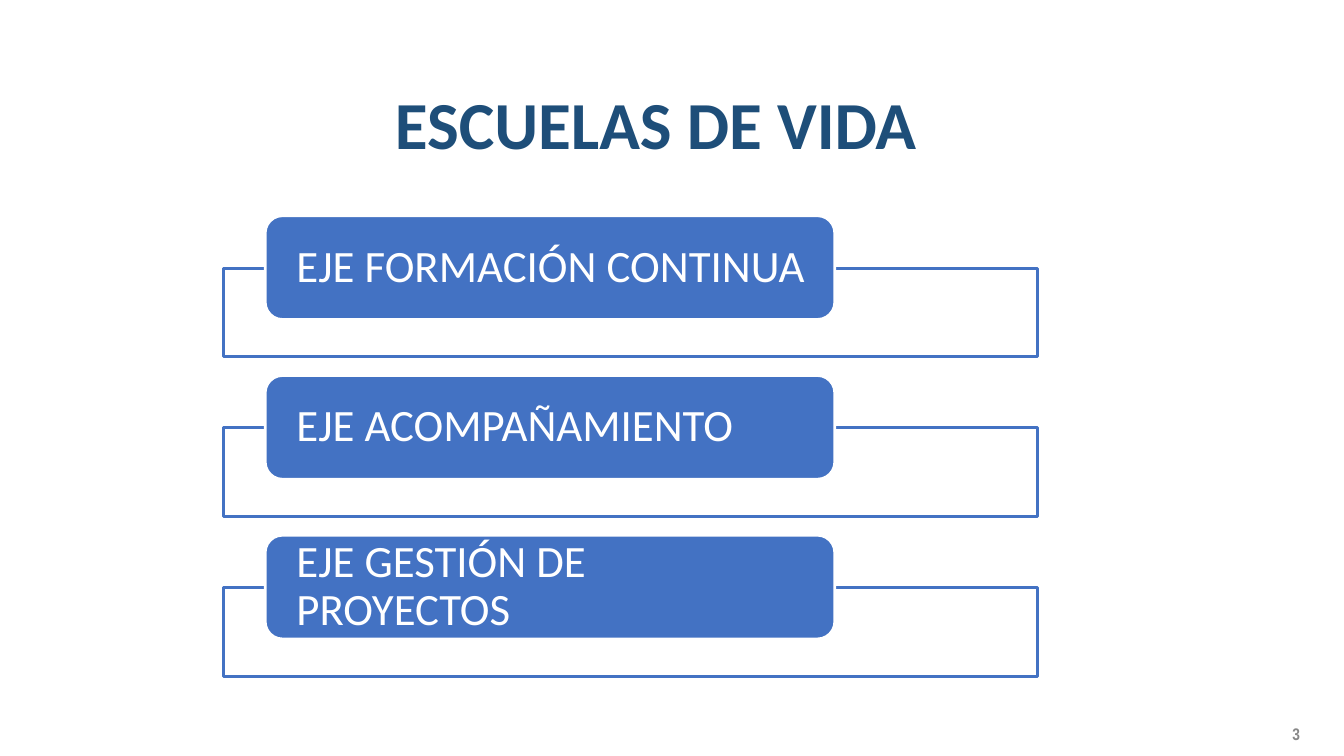
from lxml import etree
from pptx import Presentation
from pptx.dml.color import RGBColor
from pptx.enum.shapes import MSO_SHAPE as Shape
from pptx.enum.text import MSO_ANCHOR as Anchor, PP_ALIGN as Align
from pptx.oxml.ns import qn
from pptx.util import Pt

EMU_PER_PX = 9144  # 100 px to the inch
BLUE, NAVY, GRAY, WHITE = "4372C3", "1E4E79", "888888", "FFFFFF"
AXES = ["EJE FORMACIÓN CONTINUA", "EJE ACOMPAÑAMIENTO", "EJE GESTIÓN DE PROYECTOS"]


def px(*lengths):
    return [round(length * EMU_PER_PX) for length in lengths]


def color(hex_code):
    return RGBColor.from_string(hex_code)


def write(holder, text, size, ink, font="Calibri", bold=False, align=Align.LEFT,
          anchor=Anchor.MIDDLE, insets=(10, 5, 10, 5), spacing=None):
    frame = holder.text_frame
    frame.word_wrap = True
    frame.vertical_anchor = anchor
    (frame.margin_left, frame.margin_top,
     frame.margin_right, frame.margin_bottom) = px(*insets)
    paragraph = frame.paragraphs[0]
    paragraph.alignment = align
    paragraph.line_spacing = spacing
    run = paragraph.add_run()
    run.text = text
    run.font.name = font
    run.font.size = Pt(size)
    run.font.bold = bold
    run.font.color.rgb = color(ink)


def add_panel(slide, kind, box, fill, line):
    panel = slide.shapes.add_shape(kind, *px(*box))
    panel.shadow.inherit = False
    panel.fill.solid()
    panel.fill.fore_color.rgb = color(fill)
    panel.line.color.rgb = color(line)
    panel.line.width = Pt(2)
    return panel


def set_opacity(panel, percent):
    fill_color = panel.fill._xPr.find(qn("a:solidFill"))[0]
    etree.SubElement(fill_color, qn("a:alpha"), val=str(percent * 1000))


def add_title(slide, box):
    title = slide.shapes.add_textbox(*px(*box))
    write(title, "ESCUELAS DE VIDA", 48, NAVY, bold=True, align=Align.CENTER,
          anchor=Anchor.BOTTOM, spacing=0.9)


def add_axis(slide, box, name):
    """Draw an outlined frame with a rounded label over its top edge."""
    left, top, width, height = box
    frame = add_panel(slide, Shape.RECTANGLE, (left, top + 52, width, height - 52),
                      WHITE, BLUE)
    set_opacity(frame, 90)
    label = add_panel(slide, Shape.ROUNDED_RECTANGLE, (left + 41, top, 565, 103),
                      BLUE, WHITE)
    write(label, name, 32, WHITE, insets=(26, 0, 20, 0), spacing=0.9)


def add_axes(slide, box):
    left, top, width, height = box
    axis_height = 140
    pitch = (height - axis_height) / (len(AXES) - 1)
    for index, name in enumerate(AXES):
        add_axis(slide, (left, top + index * pitch, width, axis_height), name)


def add_page_number(slide, box):
    number = slide.shapes.add_textbox(*px(*box))
    write(number, "3", 12, GRAY, font="Arial Narrow", bold=True, align=Align.CENTER)


def main():
    deck = Presentation()
    deck.slide_width, deck.slide_height = px(1333, 750)
    slide = deck.slides.add_slide(deck.slide_layouts[6])
    add_page_number(slide, (1247, 708, 77, 40))
    add_title(slide, (131, 68, 1039, 100))
    add_axes(slide, (222, 214, 807, 457))
    deck.save("out.pptx")


if __name__ == "__main__":
    main()
